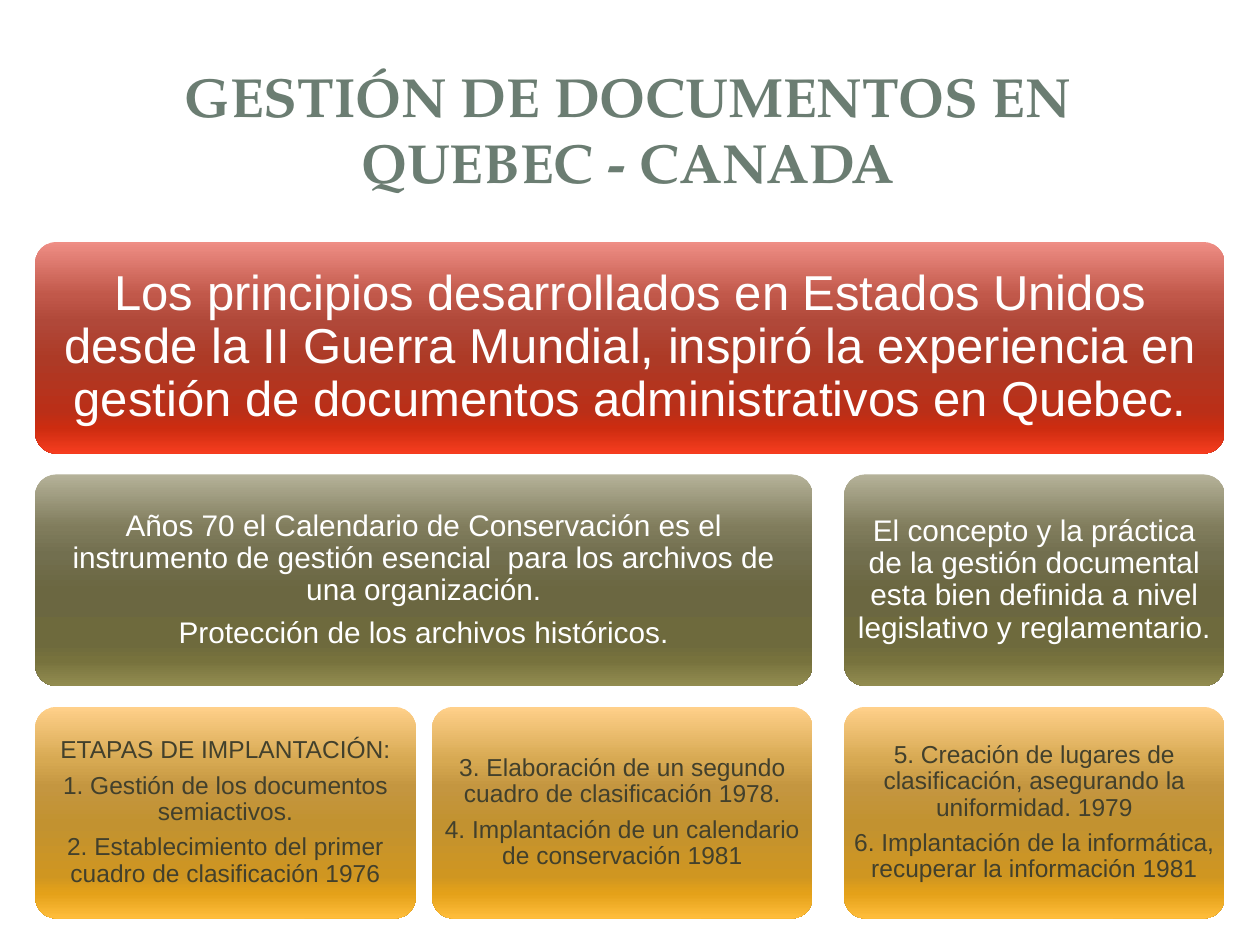
"""Build the slide on records management in Quebec."""
import pptx
import pptx.util
import pptx.dml.color
import pptx.enum.shapes
import pptx.enum.text
import pptx.oxml
import pptx.oxml.ns

TITLE = "GESTIÓN DE DOCUMENTOS EN QUEBEC - CANADA"
STOPS = [0, 25, 38, 55, 80, 88, 100]
ROWS = [
    {
        "fade": ["EF8E85", "C1584A", "B04839", "AD3A26", "BA2F18", "CD2C10", "F63D1F"],
        "ink": "FFFFFF", "size": 28, "pad": 0.12,
        "cards": [
            (0, 2, ["Los principios desarrollados en Estados Unidos desde la II Guerra Mundial, "
                    "inspiró la experiencia en gestión de documentos administrativos en Quebec."]),
        ],
    },
    {
        "fade": ["B5B299", "807C5C", "726F4F", "6B6741", "6E6A3D", "77723D", "928C50"],
        "ink": "FFFFFF", "size": 17, "pad": 0.07,
        "cards": [
            (0, 1, ["Años 70 el Calendario de Conservación es el instrumento de gestión esencial  "
                    "para los archivos de una organización.",
                    "Protección de los archivos históricos."]),
            (2, 2, ["El concepto y la práctica de la gestión documental esta bien definida "
                    "a nivel legislativo y reglamentario."]),
        ],
    },
    {
        "fade": ["FFD08A", "D7A952", "C49640", "C29230", "CF9621", "E4A119", "FFBD3B"],
        "ink": "42402C", "size": 14, "pad": 0.06,
        "cards": [
            (0, 0, ["ETAPAS DE IMPLANTACIÓN:",
                    "1. Gestión de los documentos semiactivos.",
                    "2. Establecimiento del primer cuadro de clasificación 1976"]),
            (1, 1, ["3. Elaboración de un segundo cuadro de clasificación 1978.",
                    "4. Implantación de un calendario de conservación 1981"]),
            (2, 2, ["5. Creación de lugares de clasificación, asegurando la uniformidad. 1979",
                    "6. Implantación de la informática, recuperar la información 1981"]),
        ],
    },
]
LEFTS = [0.28, 3.43, 6.7]
WIDE, HIGH = 3.02, 1.68
TOP, STEP = 1.92, 1.845
ROUND = 0.1
INNER = 0.29 * ROUND * HIGH

Inches, Pt = pptx.util.Inches, pptx.util.Pt


def color(code):
    return pptx.dml.color.RGBColor.from_string(code)


def write(frame, lines, face, size, ink, pad, bold=False):
    frame.word_wrap = True
    frame.vertical_anchor = pptx.enum.text.MSO_ANCHOR.MIDDLE
    frame.margin_left = frame.margin_right = Inches(pad)
    frame.margin_top = frame.margin_bottom = Inches(pad)
    for num, line in enumerate(lines):
        para = frame.add_paragraph() if num else frame.paragraphs[0]
        para.text = line
        para.alignment = pptx.enum.text.PP_ALIGN.CENTER
        para.font.name, para.font.size, para.font.bold = face, Pt(size), bold
        para.font.color.rgb = color(ink)


def shade(shape, fade):
    stops = "".join(
        f'<a:gs pos="{pos * 1000}"><a:srgbClr val="{code}"/></a:gs>'
        for pos, code in zip(STOPS, fade))
    grad = pptx.oxml.parse_xml(
        f'<a:gradFill {pptx.oxml.ns.nsdecls("a")} rotWithShape="1">'
        f'<a:gsLst>{stops}</a:gsLst><a:lin ang="5400000" scaled="0"/></a:gradFill>')
    shape.fill.background()
    blank = shape.element.spPr.find(pptx.oxml.ns.qn("a:noFill"))
    shape.element.spPr.replace(blank, grad)


def card(slide, row, top, first, last, lines):
    left = LEFTS[first]
    shape = slide.shapes.add_shape(
        pptx.enum.shapes.MSO_SHAPE.ROUNDED_RECTANGLE, Inches(left), Inches(top),
        Inches(LEFTS[last] + WIDE - left), Inches(HIGH))
    shape.adjustments[0] = ROUND
    shape.shadow.inherit = False
    shade(shape, row["fade"])
    shape.line.fill.background()
    size = row["size"]
    write(shape.text_frame, lines, "Arial", size, row["ink"], row["pad"] - INNER)
    for para in shape.text_frame.paragraphs:
        para.line_spacing = 0.9
        para.space_after = Pt(round(size * 0.35))


def main():
    deck = pptx.Presentation()
    deck.slide_width, deck.slide_height = Inches(10), Inches(7.5)
    slide = deck.slides.add_slide(deck.slide_layouts[6])
    head = slide.shapes.add_textbox(Inches(0.47), Inches(0.45), Inches(9.03), Inches(1.14))
    write(head.text_frame, [TITLE], "TeX Gyre Pagella", 31.5, "6B7D72", 0.1, True)
    for num, row in enumerate(ROWS):
        for first, last, lines in row["cards"]:
            card(slide, row, TOP + num * STEP, first, last, lines)
    deck.save("out.pptx")


if __name__ == "__main__":
    main()
